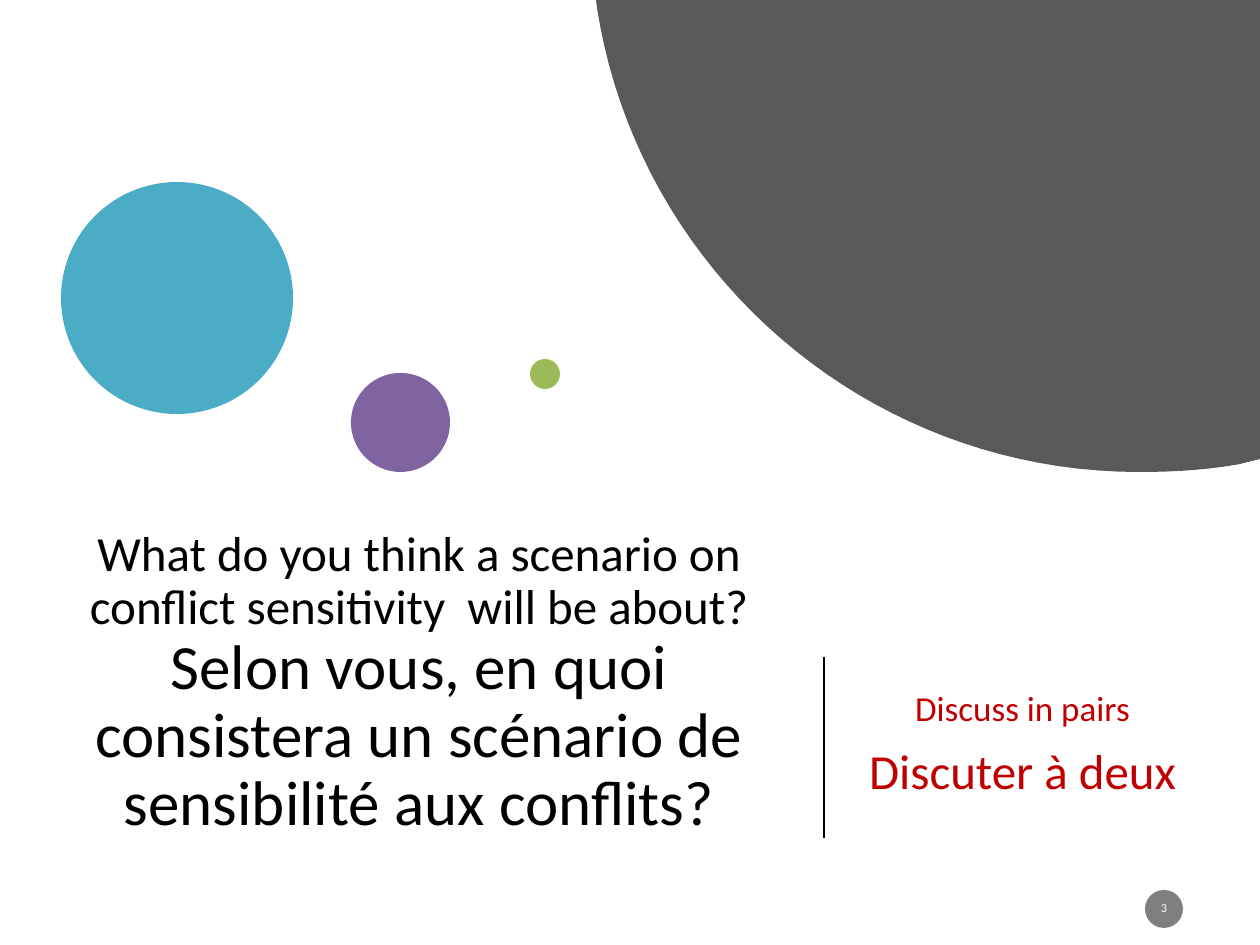
"""Build the discussion slide with decorative circles and a bilingual question."""
from dataclasses import dataclass

from lxml.etree import SubElement
from pptx import Presentation
from pptx.dml.color import RGBColor
from pptx.enum.shapes import MSO_CONNECTOR as Connector, MSO_SHAPE as Preset
from pptx.enum.text import MSO_ANCHOR as Anchor, MSO_AUTO_SIZE as AutoSize, PP_ALIGN as Align
from pptx.oxml.ns import qn
from pptx.util import Pt


@dataclass(frozen=True)
class Theme:
    font: str = "Calibri"
    ink: str = "000000"
    accent: str = "C00000"
    dark: str = "595959"
    badge: str = "7F7F7F"
    white: str = "FFFFFF"
    teal: str = "4BACC6"
    purple: str = "8064A2"
    green: str = "9BBB59"
    french_title: int = 36
    large: int = 28
    medium: int = 20
    number: int = 7


THEME = Theme()
EMU_PER_PX = 914400 / 126
SLIDE_SIZE = (1260, 945)

TITLE_BOX = (38, 503, 762, 363)
TITLE_RUNS = [
    ("What do you think a scenario on conflict sensitivity  will be about? ", THEME.large),
    ("Selon vous, en quoi consistera un scénario de sensibilité aux conflits?", THEME.french_title),
]
PROMPT_BOX = (848, 627, 349, 237)
PROMPTS = [("Discuss in pairs", THEME.medium), ("Discuter à deux", THEME.large)]

CIRCLES = [
    (61, 182, 232, THEME.teal),
    (351, 373, 99, THEME.purple),
    (530, 359, 30, THEME.green),
]
NUMBER_CIRCLE = (1145, 890, 38, THEME.badge)
DIVIDER = (824, 657, 824, 838)

ARC_OUTLINE = [(596, 0), (1260, 0), (1260, 459), (1240, 464)]
ARC_CURVES = [
    [(1240, 464), (1207, 470), (1173, 472), (1139, 472)],
    [(1139, 472), (866, 472), (638, 271), (597, 8)],
]
CURVE_STEPS = 40


def px(*values):
    return [round(value * EMU_PER_PX) for value in values]


def bezier(points, t):
    weights = ((1 - t) ** 3, 3 * t * (1 - t) ** 2, 3 * t * t * (1 - t), t ** 3)
    return tuple(sum(w * point[axis] for w, point in zip(weights, points)) for axis in (0, 1))


def paint(shape, color):
    shape.shadow.inherit = False
    shape.fill.solid()
    shape.fill.fore_color.rgb = RGBColor.from_string(color)
    shape.line.fill.background()


def add_circle(slide, left, top, diameter, color):
    circle = slide.shapes.add_shape(Preset.OVAL, *px(left, top, diameter, diameter))
    paint(circle, color)
    return circle


def add_arc(slide):
    curve = [bezier(points, step / CURVE_STEPS)
             for points in ARC_CURVES for step in range(1, CURVE_STEPS + 1)]
    start, *rest = [px(*point) for point in ARC_OUTLINE + curve]
    builder = slide.shapes.build_freeform(*start)
    builder.add_line_segments(rest, close=True)
    paint(builder.convert_to_shape(), THEME.dark)


def format_frame(frame):
    frame.word_wrap = True
    frame.auto_size = AutoSize.NONE
    frame.vertical_anchor = Anchor.MIDDLE


def format_paragraph(paragraph, color, size=None):
    paragraph.alignment = Align.CENTER
    paragraph.line_spacing = 0.9
    paragraph.font.name = THEME.font
    paragraph.font.color.rgb = RGBColor.from_string(color)
    if size:
        paragraph.font.size = Pt(size)


def fill_title(slide):
    title = slide.shapes.title
    title.left, title.top, title.width, title.height = px(*TITLE_BOX)
    format_frame(title.text_frame)
    paragraph = title.text_frame.paragraphs[0]
    format_paragraph(paragraph, THEME.ink)
    for text, size in TITLE_RUNS:
        run = paragraph.add_run()
        run.text = text
        run.font.size = Pt(size)


def add_prompts(slide):
    frame = slide.shapes.add_textbox(*px(*PROMPT_BOX)).text_frame
    format_frame(frame)
    frame.text = "\n".join(text for text, _ in PROMPTS)
    for paragraph, (_, size) in zip(frame.paragraphs, PROMPTS):
        format_paragraph(paragraph, THEME.accent, size)
        paragraph.space_before = Pt(10)


def add_divider(slide):
    divider = slide.shapes.add_connector(Connector.STRAIGHT, *px(*DIVIDER))
    divider.line.color.rgb = RGBColor.from_string(THEME.ink)
    divider.line.width = Pt(1.5)
    SubElement(divider._element.spPr, qn("a:effectLst"))


def add_slide_number(slide):
    frame = add_circle(slide, *NUMBER_CIRCLE).text_frame
    format_frame(frame)
    frame.margin_left = frame.margin_right = frame.margin_top = frame.margin_bottom = 0
    frame.text = "3"
    format_paragraph(frame.paragraphs[0], THEME.white, THEME.number)
    frame.paragraphs[0].space_after = Pt(6)


def main():
    presentation = Presentation()
    presentation.slide_width, presentation.slide_height = px(*SLIDE_SIZE)
    slide = presentation.slides.add_slide(presentation.slide_layouts[5])
    fill_title(slide)
    add_prompts(slide)
    for circle in CIRCLES:
        add_circle(slide, *circle)
    add_arc(slide)
    add_divider(slide)
    add_slide_number(slide)
    presentation.save("out.pptx")


if __name__ == "__main__":
    main()
